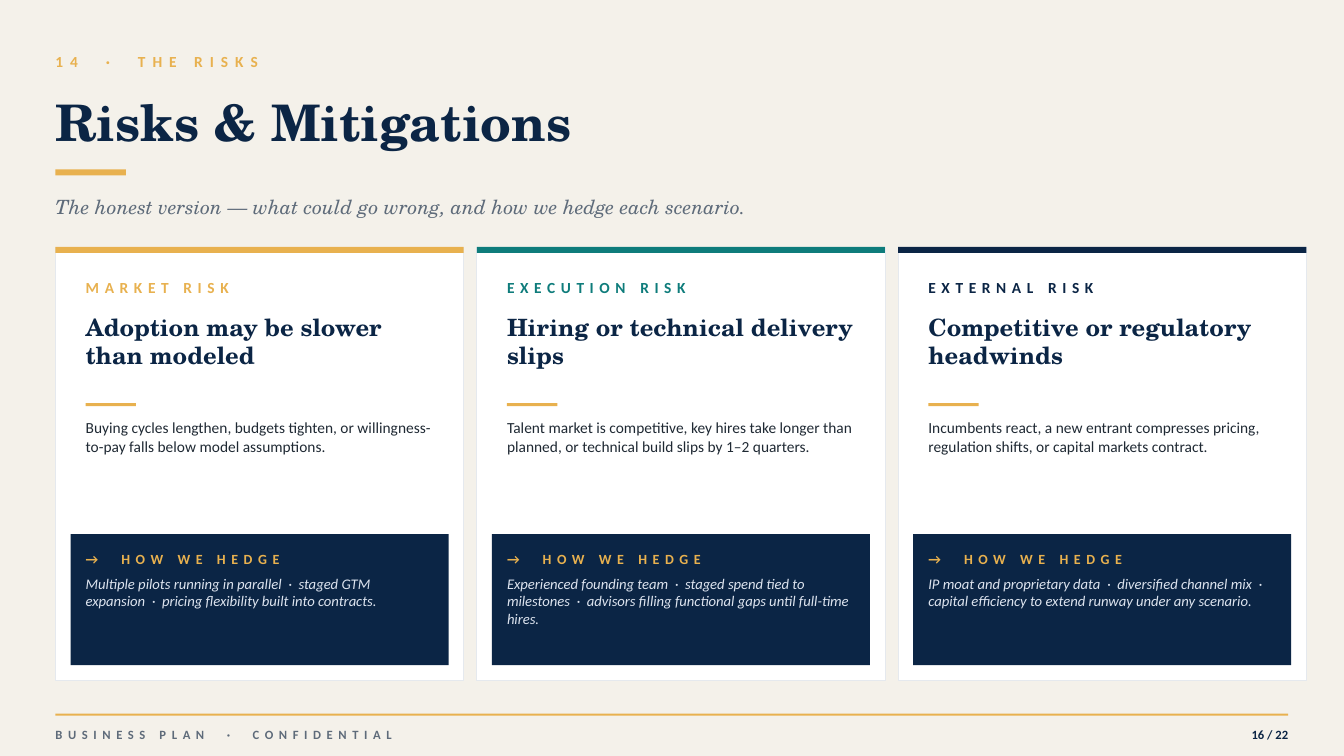
import pptx
import pptx.dml.color
import pptx.enum.shapes
import pptx.enum.text
import pptx.util

Pt = pptx.util.Pt
RGBColor = pptx.dml.color.RGBColor
Align = pptx.enum.text.PP_ALIGN
Anchor = pptx.enum.text.MSO_ANCHOR

CREAM = RGBColor(0xF4, 0xF1, 0xEA)
WHITE = RGBColor(0xFF, 0xFF, 0xFF)
GOLD = RGBColor(0xE8, 0xB1, 0x4F)
TEAL = RGBColor(0x0E, 0x7C, 0x7B)
NAVY = RGBColor(0x0B, 0x25, 0x45)
SLATE = RGBColor(0x5E, 0x6B, 0x7A)
INK = RGBColor(0x1F, 0x29, 0x33)
MIST = RGBColor(0xDC, 0xE3, 0xEE)
HAIRLINE = RGBColor(0xE5, 0xE9, 0xEE)

MARGIN = 39.6
CARD_WIDTH = 291.6
CARD_PITCH = 300.96
CARD_TOP = 176.4
CARD_PADDING = 21.6
HEDGE_INSET = 10.8
HEDGE_TOP = 381.6

RISKS = [
    ("MARKET RISK", GOLD, "Adoption may be slower than modeled",
     "Buying cycles lengthen, budgets tighten, or willingness-to-pay falls below model assumptions.",
     "Multiple pilots running in parallel  ·  staged GTM expansion  ·  "
     "pricing flexibility built into contracts."),
    ("EXECUTION RISK", TEAL, "Hiring or technical delivery slips",
     "Talent market is competitive, key hires take longer than planned, "
     "or technical build slips by 1–2 quarters.",
     "Experienced founding team  ·  staged spend tied to milestones  ·  "
     "advisors filling functional gaps until full-time hires."),
    ("EXTERNAL RISK", NAVY, "Competitive or regulatory headwinds",
     "Incumbents react, a new entrant compresses pricing, regulation shifts, "
     "or capital markets contract.",
     "IP moat and proprietary data  ·  diversified channel mix  ·  "
     "capital efficiency to extend runway under any scenario."),
]


class RiskDeck:
    """Holds the fonts and the current slide."""

    heading_font = "TeX Gyre Schola"
    body_font = "Calibri"

    def __init__(self):
        self.deck = pptx.Presentation()
        self.deck.slide_width, self.deck.slide_height = Pt(960), Pt(540)
        self.slide = self.deck.slides.add_slide(self.deck.slide_layouts[6])
        self.slide.background.fill.solid()
        self.slide.background.fill.fore_color.rgb = CREAM

    def bar(self, left, top, width, height, fill, outline=None):
        block = self.slide.shapes.add_shape(
            pptx.enum.shapes.MSO_SHAPE.RECTANGLE, Pt(left), Pt(top), Pt(width), Pt(height))
        block.shadow.inherit = False
        block.fill.solid()
        block.fill.fore_color.rgb = fill
        if outline is None:
            block.line.fill.background()
        else:
            block.line.color.rgb = outline
            block.line.width = Pt(0.5)

    def text(self, left, top, width, height, words, size, color, font=body_font,
             bold=False, italic=False, spacing=0, anchor=Anchor.MIDDLE, align=Align.LEFT):
        frame = self.slide.shapes.add_textbox(
            Pt(left), Pt(top), Pt(width), Pt(height)).text_frame
        frame.word_wrap = True
        frame.margin_left = frame.margin_top = frame.margin_right = frame.margin_bottom = 0
        frame.vertical_anchor = anchor
        frame.paragraphs[0].alignment = align
        run = frame.paragraphs[0].add_run()
        run.text = words
        run.font.name, run.font.size = font, Pt(size)
        run.font.bold, run.font.italic = bold, italic
        run.font.color.rgb = color
        if spacing:
            run._r.get_or_add_rPr().set("spc", str(spacing * 100))

    def card(self, left, label, accent, headline, threat, hedge):
        inner = left + CARD_PADDING
        width = CARD_WIDTH - 2 * CARD_PADDING
        self.bar(left, CARD_TOP, CARD_WIDTH, 309.6, WHITE, HAIRLINE)
        self.bar(left, CARD_TOP, CARD_WIDTH, 4.32, accent)
        # Risk
        self.text(inner, 194.4, width, 21.6, label, 11, accent, bold=True, spacing=4)
        self.text(inner, 223.2, width, 61.2, headline, 17, NAVY, self.heading_font,
                  bold=True, anchor=Anchor.TOP)
        self.bar(inner, 288, 36, 2.16, GOLD)
        self.text(inner, 298.8, width, 72, threat, 11, INK, anchor=Anchor.TOP)
        # Hedge
        self.bar(left + HEDGE_INSET, HEDGE_TOP, CARD_WIDTH - 2 * HEDGE_INSET, 93.6, NAVY)
        self.text(inner, HEDGE_TOP + 7.2, width, 21.6, "→  HOW WE HEDGE", 10, GOLD,
                  bold=True, spacing=4)
        self.text(inner, HEDGE_TOP + 28.8, width, 61.2, hedge, 10.5, MIST,
                  italic=True, anchor=Anchor.TOP)


def main():
    page = RiskDeck()

    # Header
    page.text(MARGIN, 32.4, 720, 23.04, "14  ·  THE RISKS", 11, GOLD, bold=True, spacing=5)
    page.text(MARGIN, 56.16, 885.6, 61.2, "Risks & Mitigations", 36, NAVY,
              page.heading_font, bold=True)
    page.bar(MARGIN, 120.96, 50.4, 4.32, GOLD)
    page.text(MARGIN, 133.2, 885.6, 28.8,
              "The honest version — what could go wrong, and how we hedge each scenario.",
              14, SLATE, page.heading_font, italic=True)

    # Risk cards
    for column, risk in enumerate(RISKS):
        page.card(MARGIN + column * CARD_PITCH, *risk)

    # Footer
    page.bar(MARGIN, 509.76, 880.56, 1.44, GOLD)
    page.text(MARGIN, 514.8, 432, 20.16, "BUSINESS PLAN  ·  CONFIDENTIAL", 9, SLATE,
              bold=True, spacing=4)
    page.text(848.16, 514.8, 72, 20.16, "16 / 22", 9, NAVY, bold=True, align=Align.RIGHT)

    page.deck.save("out.pptx")


if __name__ == "__main__":
    main()
